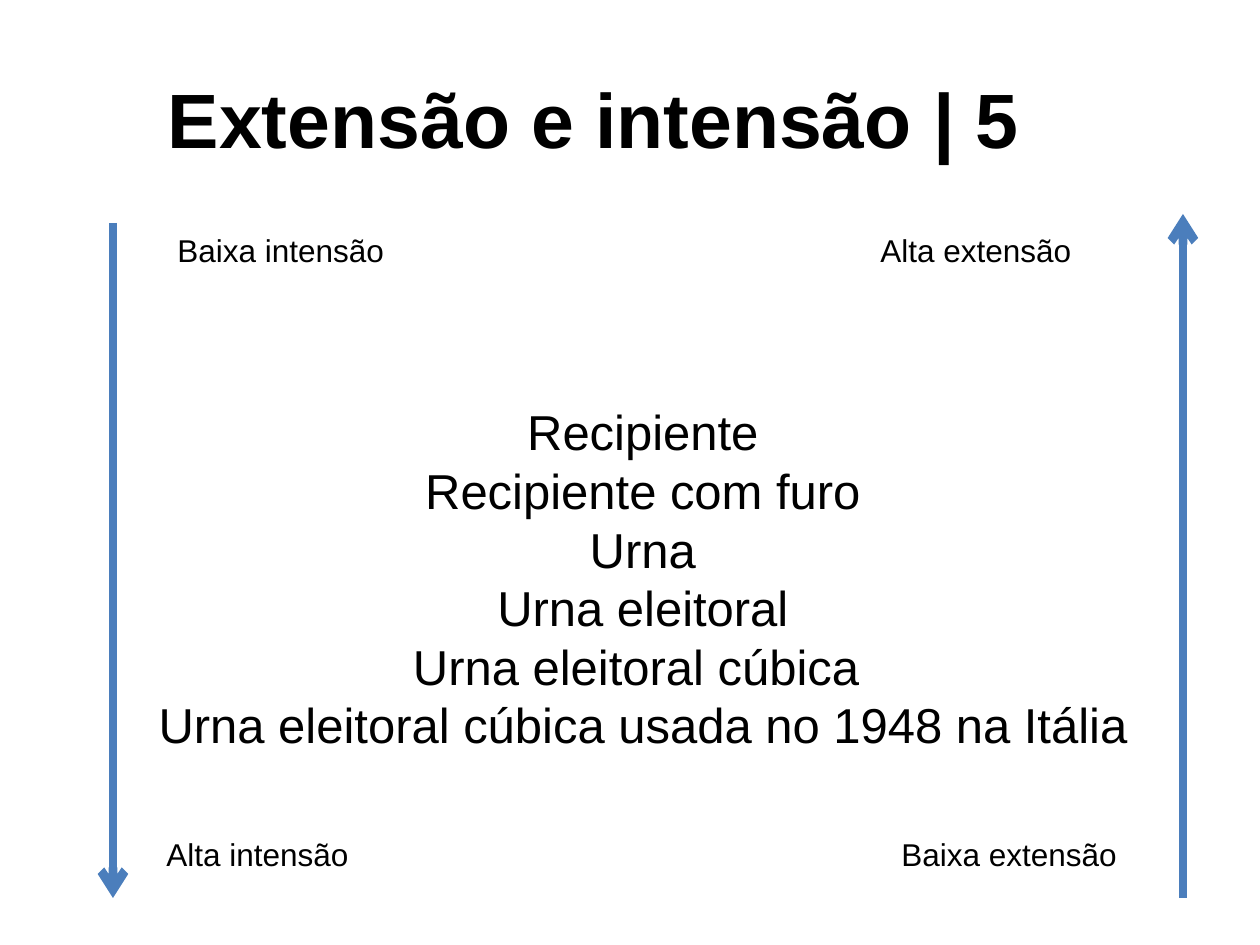
from lxml import etree
from pptx import Presentation, util as u
from pptx.dml.color import RGBColor
from pptx.enum import shapes, text
from pptx.oxml.ns import qn

PX = u.Inches(1) / 126
COLORS = {"text": "000000", "arrow": "4B7EBC"}


def px(*lengths):
    return [round(length * PX) for length in lengths]


def add_text(box, lines, size, bold=False, align=text.PP_ALIGN.LEFT):
    """Add a wrapped text box with one paragraph per line; return its text frame."""
    frame = slide.shapes.add_textbox(*px(*box)).text_frame
    frame.word_wrap = True
    for index, line in enumerate(lines):
        paragraph = frame.add_paragraph() if index else frame.paragraphs[0]
        paragraph.text = line
        paragraph.alignment = align
        paragraph.font.name = "Arial"
        paragraph.font.size = u.Pt(size)
        paragraph.font.bold = bold
        paragraph.font.color.rgb = RGBColor.from_string(COLORS["text"])
    return frame


presentation = Presentation()
presentation.slide_width, presentation.slide_height = px(1260, 945)
slide = presentation.slides.add_slide(presentation.slide_layouts[6])

# Concepts, from the most general to the most specific
concepts = add_text((52, 393, 1134, 384), [
    "Recipiente",
    "Recipiente com furo",
    "Urna",
    "Urna eleitoral",
    "Urna eleitoral cúbica ",
    "Urna eleitoral cúbica usada no 1948 na Itália",
], 28, align=text.PP_ALIGN.CENTER)
concepts.margin_left, concepts.margin_top = px(60, 9)
for paragraph in concepts.paragraphs:
    paragraph.line_spacing = u.Pt(33.5)

title = add_text((49, 39, 1134, 158), ["Extensão e intensão | 5"], 44,
                 bold=True, align=text.PP_ALIGN.CENTER)
title.vertical_anchor = text.MSO_ANCHOR.MIDDLE
title.margin_right, = px(56)

# Intension grows downwards, extension grows upwards
for x, start, end in [(113, 223, 898), (1183, 898, 214)]:
    arrow = slide.shapes.add_connector(
        shapes.MSO_CONNECTOR.STRAIGHT, *px(x, start, x, end))
    arrow.line.color.rgb = RGBColor.from_string(COLORS["arrow"])
    arrow.line.width = u.Pt(5)
    properties = arrow.element.spPr
    etree.SubElement(properties.find(qn("a:ln")), qn("a:tailEnd"), type="arrow")
    etree.SubElement(properties, qn("a:effectLst"))

for label, left, top, width in [
    ("Alta intensão", 154, 829, 218),
    ("Baixa intensão", 165, 225, 257),
    ("Alta extensão", 868, 225, 257),
    ("Baixa extensão", 889, 829, 257),
]:
    frame = add_text((left, top, width, 50), [label], 18)
    frame.auto_size = text.MSO_AUTO_SIZE.SHAPE_TO_FIT_TEXT

presentation.save("out.pptx")
